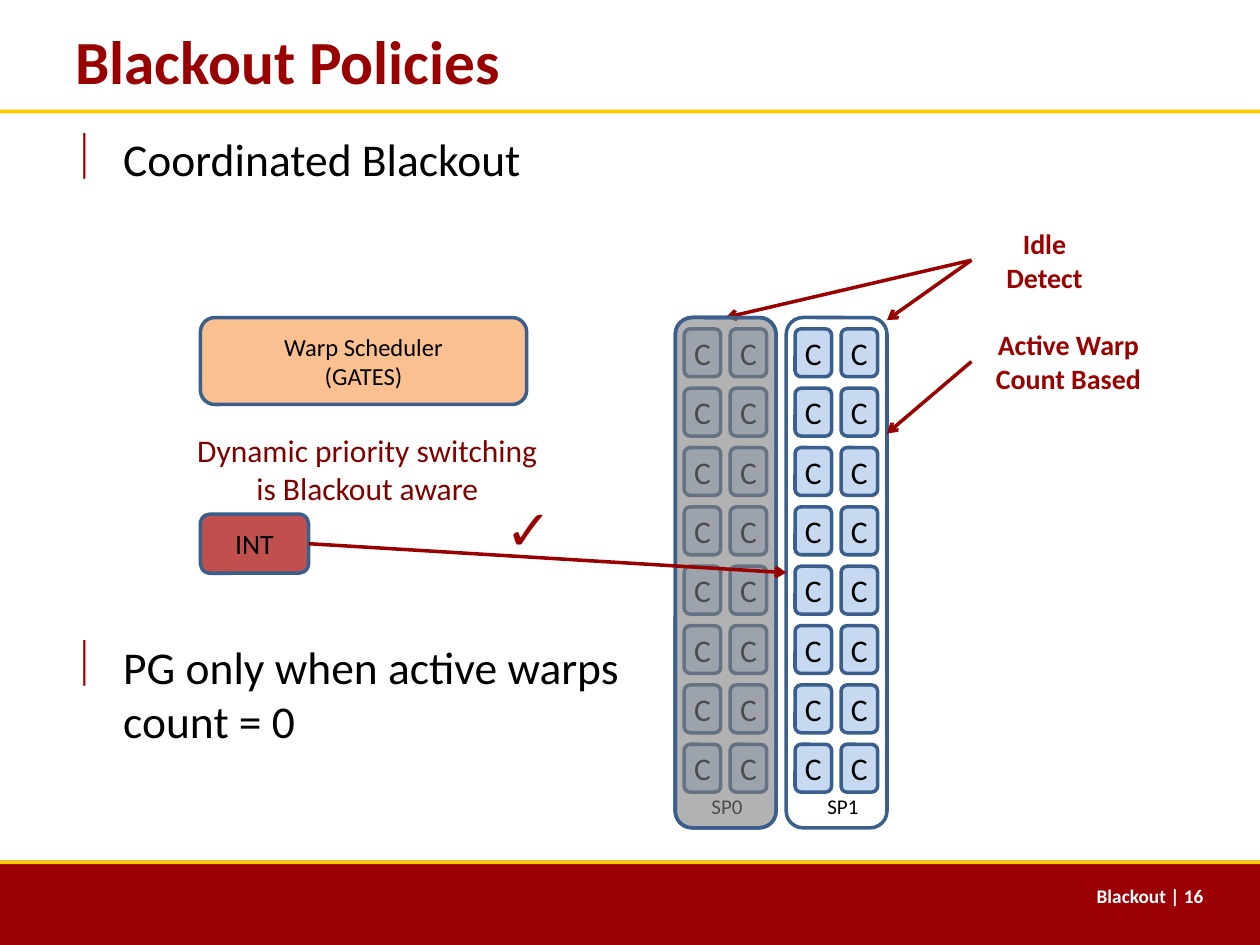
"""Build the Blackout Policies slide on a grid of 100 columns by 75 rows."""
from dataclasses import dataclass
from itertools import product

from lxml import etree
from pptx import Presentation
from pptx import util as u
from pptx.dml.color import RGBColor
from pptx.enum import shapes, text
from pptx.oxml import ns

COLUMNS, ROWS = 100, 75
WIDTH, HEIGHT = u.Inches(10), u.Inches(7.5)


@dataclass(frozen=True)
class Theme:
    """Colours and type sizes of the slide."""
    face: str = "Calibri"
    band: str = "9A0004"
    gold: str = "FFCC00"
    accent: str = "990000"
    remark: str = "800000"
    ink: str = "000000"
    paper: str = "FFFFFF"
    outline: str = "3A5F8C"
    core: str = "C6D9F1"
    scheduler: str = "FAC090"
    integer: str = "C0504D"
    shade: str = "808080"
    title: int = 35
    check: int = 32
    body: int = 26
    large: int = 18
    label: int = 16
    medium: int = 14
    small: int = 12
    footer: int = 11
    stroke: int = 2


THEME = Theme()


def cell(column, row):
    """Turn a grid position or extent into slide lengths."""
    return round(WIDTH * column / COLUMNS), round(HEIGHT * row / ROWS)


def place(column, row, columns, rows):
    """Turn a grid rectangle into left, top, width and height."""
    return *cell(column, row), *cell(columns, rows)


def add_child(parent, tag, **attributes):
    """Append a DrawingML element to its parent."""
    return etree.SubElement(parent, ns.qn(tag), attributes)


def write(shape, lines, size, color=THEME.ink, bold=False,
          align=text.PP_ALIGN.CENTER, anchor=text.MSO_ANCHOR.MIDDLE, wrap=True):
    """Fill a shape with one paragraph per line in a single style."""
    frame = shape.text_frame
    frame.word_wrap = wrap
    frame.vertical_anchor = anchor
    frame.text = "\n".join(lines)
    for paragraph in frame.paragraphs:
        paragraph.alignment = align
        font = paragraph.font
        font.name, font.size, font.bold = THEME.face, u.Pt(size), bold
        font.color.rgb = RGBColor.from_string(color)
    return shape


def add_label(slide, area, lines, size, **style):
    """Add a text box."""
    return write(slide.shapes.add_textbox(*place(*area)), lines, size, **style)


def add_box(slide, area, fill=None, outline=THEME.outline,
            kind=shapes.MSO_SHAPE.ROUNDED_RECTANGLE):
    """Add a flat box, with no fill or no outline when none is given."""
    box = slide.shapes.add_shape(kind, *place(*area))
    box.shadow.inherit = False
    if fill:
        box.fill.solid()
        box.fill.fore_color.rgb = RGBColor.from_string(fill)
    else:
        box.fill.background()
    if outline:
        box.line.color.rgb = RGBColor.from_string(outline)
        box.line.width = u.Pt(THEME.stroke)
    else:
        box.line.fill.background()
    return box


def add_unit(slide, area, fill, name, size):
    """Add a named box without text margins."""
    unit = write(add_box(slide, area, fill), [name], size)
    frame = unit.text_frame
    frame.margin_left = frame.margin_right = frame.margin_top = frame.margin_bottom = 0
    return unit


def add_arrow(slide, source, target=None, side=0, tip=(0, 0)):
    """Add an arrow from a (shape, side) pair to a shape's side or a free tip."""
    arrow = slide.shapes.add_connector(
        shapes.MSO_CONNECTOR.STRAIGHT, 0, 0, *cell(*tip))
    arrow.begin_connect(*source)
    if target is not None:
        arrow.end_connect(target, side)
    arrow.line.color.rgb = RGBColor.from_string(THEME.accent)
    arrow.line.width = u.Pt(THEME.stroke)
    add_child(arrow.line._get_or_add_ln(), "a:tailEnd", type="arrow")
    add_child(arrow._element.spPr, "a:effectLst")


def add_bank(slide, area, name, name_column):
    """Add a bank of two by eight cores with its name below them."""
    column, row = area[:2]
    bank = add_box(slide, area)
    for line, side in product(range(8), range(2)):
        core = (column + 0.7 + 3.65 * side, row + 0.9 + 4.71 * line, 2.9, 3.8)
        add_unit(slide, core, THEME.core, "C", THEME.large)
    add_label(slide, (name_column - 4, 62.5, 8, 3), [name], THEME.small)
    return bank


def add_shade(slide, area):
    """Cover a bank with a translucent grey box."""
    shade = add_box(slide, area, THEME.shade)
    color = shade._element.spPr.find(".//" + ns.qn("a:srgbClr"))
    add_child(color, "a:alpha", val="60000")


def add_frame(slide):
    """Add the title, the footer and the rules between them."""
    bars = [((0, 68.3, 100, 6.7), THEME.band),
            ((0, 68.3, 100, 0.3), THEME.gold),
            ((0, 8.7, 100, 0.3), THEME.gold)]
    for area, color in bars:
        add_box(slide, area, color, None, shapes.MSO_SHAPE.RECTANGLE)
    add_label(slide, (5, 0.8, 90, 7.9), ["Blackout Policies"], THEME.title,
              color=THEME.accent, bold=True, align=text.PP_ALIGN.LEFT)
    add_label(slide, (78.7, 69.7, 17.8, 3.5), ["Blackout | 16"], THEME.footer,
              color=THEME.paper, bold=True, align=text.PP_ALIGN.RIGHT,
              anchor=text.MSO_ANCHOR.TOP)


def add_points(slide):
    """Add the two bulleted points, above and below the diagram."""
    points = add_label(
        slide, (5, 9.9, 90, 58.4),
        ["Coordinated Blackout", "PG only when active warps\vcount = 0"],
        THEME.body, align=text.PP_ALIGN.LEFT, anchor=text.MSO_ANCHOR.TOP)
    paragraphs = points.text_frame.paragraphs
    paragraphs[1].space_before = u.Pt(259)
    indent = u.Inches(0.38)
    for paragraph in paragraphs:
        properties = paragraph._p.get_or_add_pPr()
        properties.set("marL", str(indent))
        properties.set("indent", str(-indent))
        bullet_color = etree.Element(ns.qn("a:buClr"))
        add_child(bullet_color, "a:srgbClr", val=THEME.accent)
        bullet = etree.Element(ns.qn("a:buChar"), char="|")
        run_defaults = properties.find(ns.qn("a:defRPr"))
        run_defaults.addprevious(bullet_color)
        run_defaults.addprevious(bullet)


def add_diagram(slide):
    """Add the scheduler, the core banks and the policies acting on them."""
    first, second = (53.6, 25.2, 8, 40.5), (62.4, 25.2, 8, 40.5)
    sp0 = add_bank(slide, first, "SP0", 57.7)
    sp1 = add_bank(slide, second, "SP1", 66.9)
    write(add_box(slide, (15.9, 25.2, 25.9, 6.9), THEME.scheduler),
          ["Warp Scheduler", "(GATES)"], THEME.medium)

    policy = dict(color=THEME.accent, bold=True, wrap=False)
    idle = add_label(slide, (77.1, 18.7, 11.6, 3.9), ["Idle Detect"],
                     THEME.label, **policy)
    add_arrow(slide, (idle, 1), tip=(70.4, 25.4))
    add_arrow(slide, (idle, 1), sp0, 0)
    add_shade(slide, first)

    add_label(slide, (13.7, 32.2, 30.9, 10),
              ["Dynamic priority switching", "is Blackout aware"],
              THEME.large, color=THEME.remark, wrap=False)
    active = add_label(slide, (77.1, 25.2, 15.4, 7),
                       ["Active Warp", "Count Based"], THEME.label, **policy)
    add_arrow(slide, (active, 1), tip=(70.4, 34.4))

    integer = add_unit(slide, (15.9, 40.8, 8.6, 4.7), THEME.integer, "INT", THEME.label)
    add_arrow(slide, (integer, 3), sp1, 1)
    add_label(slide, (37, 36.9, 10, 10), ["✓"], THEME.check, **policy)


def main():
    """Build and save the slide."""
    deck = Presentation()
    deck.slide_width, deck.slide_height = WIDTH, HEIGHT
    slide = deck.slides.add_slide(deck.slide_layouts[6])
    add_frame(slide)
    add_points(slide)
    add_diagram(slide)
    deck.save("out.pptx")


if __name__ == "__main__":
    main()
